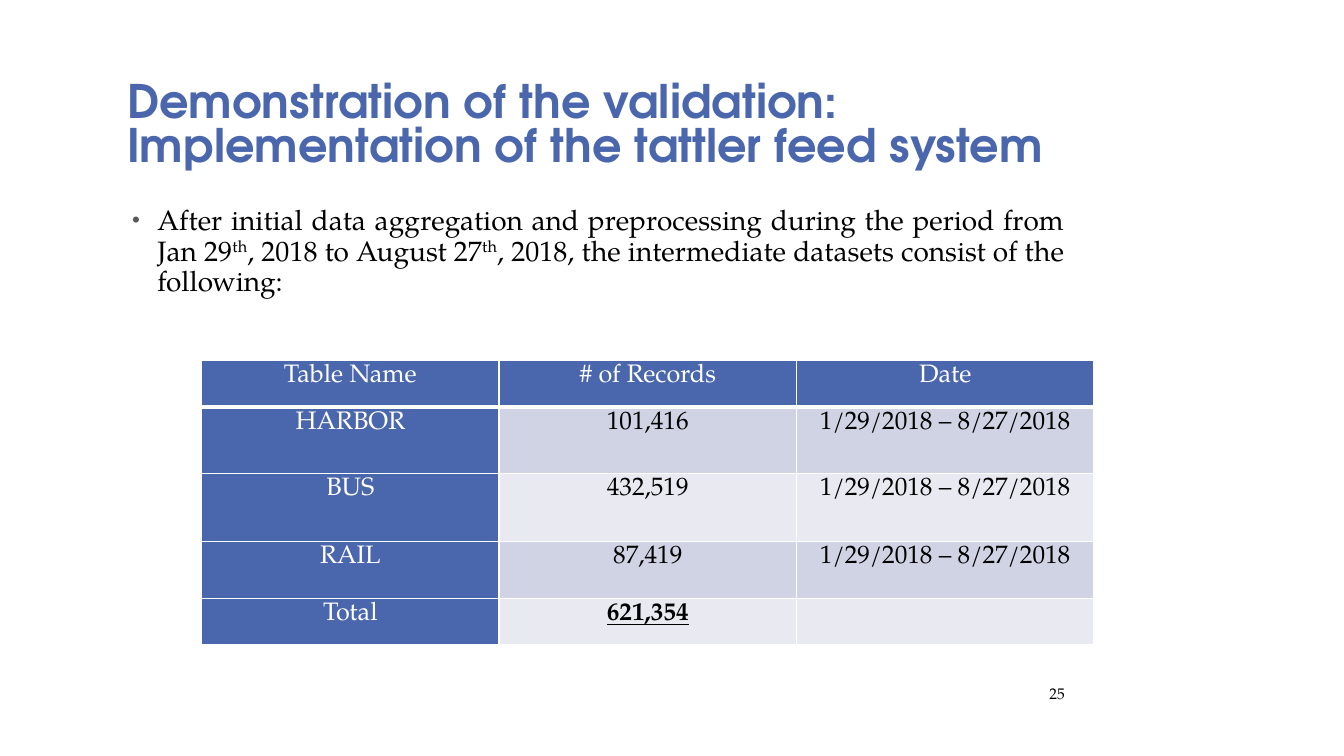
from dataclasses import dataclass

from lxml.etree import SubElement
from pptx import Presentation
from pptx.dml.color import RGBColor
from pptx.enum.text import MSO_ANCHOR, MSO_AUTO_SIZE, PP_ALIGN
from pptx.oxml.ns import qn
from pptx.util import Inches, Pt

COLORS = {
    "blue": "4A66AC",
    "band_dark": "D0D3E3",
    "band_light": "E9EAF1",
    "bullet": "595959",
    "black": "000000",
    "white": "FFFFFF",
}
TITLE_FONT = "TeX Gyre Adventor"
BODY_FONT = "TeX Gyre Pagella"
COLUMN_WIDTH = 2.95
PERIOD = "1/29/2018 – 8/27/2018"


@dataclass
class RecordRow:
    texts: tuple[str, str, str]
    height: float
    is_total: bool = False


ROWS = [
    RecordRow(("Table Name", "# of Records", "Date"), 0.46),
    RecordRow(("HARBOR", "101,416", PERIOD), 0.66),
    RecordRow(("BUS", "432,519", PERIOD), 0.67),
    RecordRow(("RAIL", "87,419", PERIOD), 0.57),
    RecordRow(("Total", "621,354", ""), 0.46, is_total=True),
]


def color(name: str) -> RGBColor:
    return RGBColor.from_string(COLORS[name])


def place(shape, left: float, top: float, width: float, height: float) -> None:
    shape.left, shape.top = Inches(left), Inches(top)
    shape.width, shape.height = Inches(width), Inches(height)


def style_font(para, name: str, size: float, color_name: str, bold: bool = False) -> None:
    para.font.name = name
    para.font.size = Pt(size)
    para.font.bold = bold
    para.font.color.rgb = color(color_name)


def add_bullet(para) -> None:
    properties = para._p.get_or_add_pPr()
    properties.set("marL", str(Inches(0.3)))
    properties.set("indent", str(Inches(-0.25)))
    bullet_color = SubElement(properties, qn("a:buClr"))
    SubElement(bullet_color, qn("a:srgbClr"), val=COLORS["bullet"])
    SubElement(properties, qn("a:buSzPct"), val="80000")
    SubElement(properties, qn("a:buFont"), typeface="Arial")
    SubElement(properties, qn("a:buChar"), char="•")


def add_borders(cell, top: float, bottom: float) -> None:
    properties = cell._tc.get_or_add_tcPr()
    for side, width in (("L", 1), ("R", 1), ("T", top), ("B", bottom)):
        line = SubElement(properties, qn(f"a:ln{side}"), w=str(Pt(width)))
        fill = SubElement(line, qn("a:solidFill"))
        SubElement(fill, qn("a:srgbClr"), val=COLORS["white"])


def fill_cell(cell, row: RecordRow, row_index: int, column_index: int) -> None:
    is_heading = row_index == 0 or column_index == 0
    band = "band_dark" if row_index % 2 else "band_light"
    add_borders(cell, top=3 if row_index == 1 else 1, bottom=3 if row_index == 0 else 1)
    cell.fill.solid()
    cell.fill.fore_color.rgb = color("blue" if is_heading else band)
    cell.margin_left = cell.margin_right = Inches(0.07)
    cell.margin_top = cell.margin_bottom = 0
    cell.text = row.texts[column_index]
    para = cell.text_frame.paragraphs[0]
    para.alignment = PP_ALIGN.CENTER
    para.line_spacing = 1.15
    emphasized = row.is_total and not is_heading
    style_font(para, BODY_FONT, 18, "white" if is_heading else "black", emphasized)
    para.font.underline = emphasized


def add_title(page) -> None:
    title = page.shapes.title
    place(title, 1.16, 0.58, 9.5, 1.17)
    frame = title.text_frame
    frame.text = "Demonstration of the validation: Implementation of the tattler feed system"
    frame.auto_size = MSO_AUTO_SIZE.NONE
    frame.vertical_anchor = MSO_ANCHOR.BOTTOM
    para = frame.paragraphs[0]
    para.alignment = PP_ALIGN.LEFT
    para.line_spacing = 0.8
    style_font(para, TITLE_FONT, 33, "blue", bold=True)


def add_body(page) -> None:
    body = page.placeholders[1]
    place(body, 1.16, 2, 9.5, 4.58)
    body.text_frame.auto_size = MSO_AUTO_SIZE.NONE
    para = body.text_frame.paragraphs[0]
    add_bullet(para)
    para.alignment = PP_ALIGN.JUSTIFY
    para.line_spacing = 0.9
    para.space_before = Pt(0)
    style_font(para, BODY_FONT, 20, "black")
    for text in (
        "After initial data aggregation and preprocessing during the period from Jan 29",
        "th",
        ", 2018 to August 27",
        "th",
        ", 2018, the intermediate datasets consist of the following:",
    ):
        span = para.add_run()
        span.text = text
        if text == "th":
            span._r.get_or_add_rPr().set("baseline", "30000")


def add_records_table(page) -> None:
    column_count = len(ROWS[0].texts)
    table = page.shapes.add_table(
        len(ROWS), column_count, Inches(2), Inches(3.58),
        Inches(COLUMN_WIDTH * column_count), Inches(sum(row.height for row in ROWS)),
    ).table
    table.first_row = table.horz_banding = False
    for column in table.columns:
        column.width = Inches(COLUMN_WIDTH)
    for row_index, row in enumerate(ROWS):
        table.rows[row_index].height = Inches(row.height)
        for column_index in range(column_count):
            fill_cell(table.cell(row_index, column_index), row, row_index, column_index)


def add_page_number(page) -> None:
    box = page.shapes.add_textbox(Inches(9.33), Inches(6.73), Inches(1.33), Inches(0.3))
    frame = box.text_frame
    frame.word_wrap = True
    frame.vertical_anchor = MSO_ANCHOR.MIDDLE
    frame.text = "25"
    para = frame.paragraphs[0]
    para.alignment = PP_ALIGN.RIGHT
    style_font(para, BODY_FONT, 11, "black")


def main() -> None:
    deck = Presentation()
    deck.slide_width, deck.slide_height = Inches(13.33), Inches(7.5)
    page = deck.slides.add_slide(deck.slide_layouts[1])

    # Heading and introduction
    add_title(page)
    add_body(page)

    # Record counts
    add_records_table(page)

    # Footer
    add_page_number(page)

    deck.save("out.pptx")


if __name__ == "__main__":
    main()
